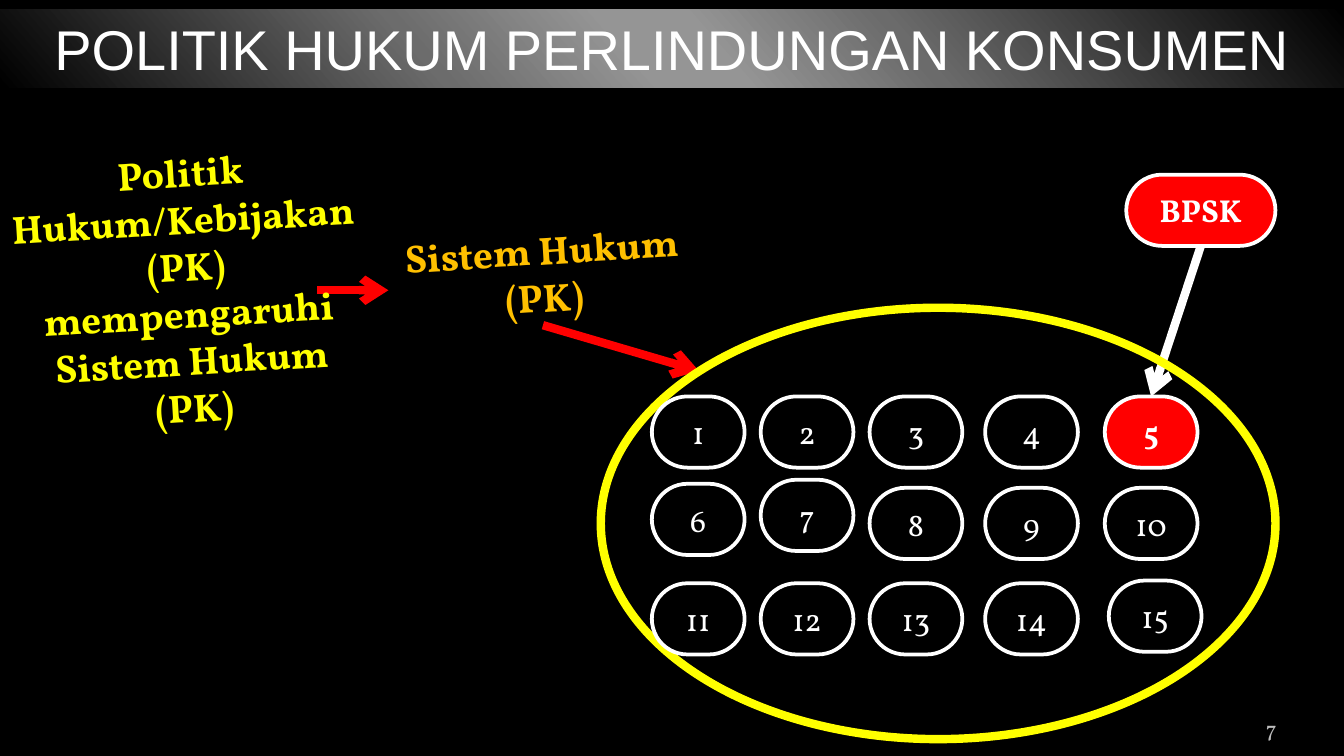
from lxml.etree import SubElement
from pptx import Presentation
from pptx.dml.color import RGBColor
from pptx.enum.shapes import MSO_CONNECTOR as Line, MSO_SHAPE as Shape
from pptx.enum.text import MSO_ANCHOR as Anchor, PP_ALIGN as Align
from pptx.oxml import parse_xml
from pptx.oxml.ns import nsdecls, qn
from pptx.util import Inches, Pt

# Content
TITLE = "POLITIK HUKUM PERLINDUNGAN KONSUMEN"
POLICY = "Politik Hukum/Kebijakan (PK) mempengaruhi Sistem Hukum (PK)"
SYSTEM = "Sistem Hukum (PK)"
AGENCY = "BPSK"
PAGE_NUMBER = "7"
NUMBERS = range(1, 16)
HIGHLIGHTED = 5

# Look
COLORS = {"black": "000000", "white": "FFFFFF", "red": "FF0000",
          "yellow": "FFFF00", "amber": "FFC000", "grey": "BDBDBD"}
TITLE_STOPS = [(0, "000000"), (33, "6B6B6B"), (47, "959595"),
               (53, "959595"), (68, "6C6C6C"), (100, "000000")]
TITLE_ANGLE = 139
BODY_FONT = "Vollkorn"
TILT = -3.5

# Widescreen page and grid of numbered pills, in inches; nudges shift single pills
WIDTH = 10
HEIGHT = WIDTH * 9 / 16
COLUMNS = [4.85, 5.66, 6.47, 7.33, 8.22]
ROWS = [2.95, 3.63, 4.34]
PILL_WIDTH, PILL_HEIGHT = 0.69, 0.53
NUDGES = {6: (0, -0.03), 7: (0, -0.06), 15: (0.03, -0.02)}


def color(name):
    return RGBColor.from_string(COLORS[name])


def write(box, text, size, ink, font=BODY_FONT, bold=False,
          align=Align.CENTER, anchor=Anchor.MIDDLE, side=0.07):
    frame = box.text_frame
    frame.word_wrap = True
    frame.vertical_anchor = anchor
    frame.margin_left = frame.margin_right = Inches(side)
    frame.margin_top = frame.margin_bottom = Inches(0.04)
    para = frame.paragraphs[0]
    para.text = text
    para.alignment = align
    para.font.name = font
    para.font.size = Pt(size)
    para.font.bold = bold
    para.font.color.rgb = color(ink)


def add_label(page, place, text, size, ink, tilt=0, **style):
    box = page.shapes.add_textbox(*map(Inches, place))
    box.rotation = tilt
    write(box, text, size, ink, **style)
    return box


def add_outline(page, kind, place, ink, weight, fill=None):
    shape = page.shapes.add_shape(kind, *map(Inches, place))
    shape.shadow.inherit = False
    shape.line.color.rgb = color(ink)
    shape.line.width = Pt(weight)
    if fill:
        shape.fill.solid()
        shape.fill.fore_color.rgb = color(fill)
    else:
        shape.fill.background()
    return shape


def add_pill(page, left, top, text, width=PILL_WIDTH, strong=False):
    pill = add_outline(page, Shape.ROUNDED_RECTANGLE, (left, top, width, PILL_HEIGHT),
                       "white", 2, "red" if strong else "black")
    pill.adjustments[0] = 0.5
    write(pill, text, 17, "white", bold=strong)
    return pill


def add_arrow(page, start, end, ink):
    arrow = page.shapes.add_connector(Line.STRAIGHT, *map(Inches, start + end))
    arrow.line.color.rgb = color(ink)
    arrow.line.width = Pt(4.5)
    SubElement(arrow.line._get_or_add_ln(), qn("a:tailEnd"), type="arrow")
    SubElement(arrow._element.spPr, qn("a:effectLst"))
    return arrow


def add_title(page):
    banner = page.shapes.add_shape(Shape.RECTANGLE, *map(Inches, (0, 0.07, WIDTH, 0.58)))
    banner.shadow.inherit = False
    banner.line.fill.background()
    stops = "".join(f'<a:gs pos="{share * 1000}"><a:srgbClr val="{shade}"/></a:gs>'
                    for share, shade in TITLE_STOPS)
    gradient = parse_xml(f'<a:gradFill {nsdecls("a")} rotWithShape="1"><a:gsLst>{stops}</a:gsLst>'
                         f'<a:lin ang="{TITLE_ANGLE * 60000}" scaled="0"/></a:gradFill>')
    banner._element.spPr.find(qn("a:prstGeom")).addnext(gradient)
    write(banner, TITLE, 30, "white", font="Arial")


def main():
    deck = Presentation()
    deck.slide_width, deck.slide_height = Inches(WIDTH), Inches(HEIGHT)
    page = deck.slides.add_slide(deck.slide_layouts[6])
    page.background.fill.solid()
    page.background.fill.fore_color.rgb = color("black")

    # Page number and title
    add_label(page, (8.67, 5.26, 0.83, 0.3), PAGE_NUMBER, 12, "grey",
              align=Align.RIGHT, anchor=Anchor.BOTTOM, side=0)
    add_title(page)

    # Policy leads to the legal system, which leads to the ellipse
    add_arrow(page, (2.36, 2.16), (2.89, 2.16), "red")
    add_label(page, (0.03, 1.06, 2.73, 2.2), POLICY, 21, "yellow", TILT,
              bold=True, anchor=Anchor.TOP)
    system = add_label(page, (2.89, 1.64, 2.3, 0.78), SYSTEM, 21, "amber", TILT,
                       bold=True, anchor=Anchor.TOP)
    system_arrow = add_arrow(page, (4.04, 2.42), (5.2, 2.76), "red")
    system_arrow.begin_connect(system, 2)
    agency_arrow = add_arrow(page, (8.93, 1.83), (8.57, 2.95), "white")
    add_outline(page, Shape.OVAL, (4.47, 2.29, 5.02, 3.21), "yellow", 4.5)

    # Numbered pills
    pills = {}
    for number in NUMBERS:
        row, column = divmod(number - 1, len(COLUMNS))
        across, down = NUDGES.get(number, (0, 0))
        pills[number] = add_pill(page, COLUMNS[column] + across, ROWS[row] + down,
                                 str(number), strong=number == HIGHLIGHTED)

    # Agency pointing at its pill
    agency = add_pill(page, 8.38, 1.3, AGENCY, width=1.11, strong=True)
    agency_arrow.begin_connect(agency, 2)
    agency_arrow.end_connect(pills[HIGHLIGHTED], 0)

    deck.save("out.pptx")


if __name__ == "__main__":
    main()
